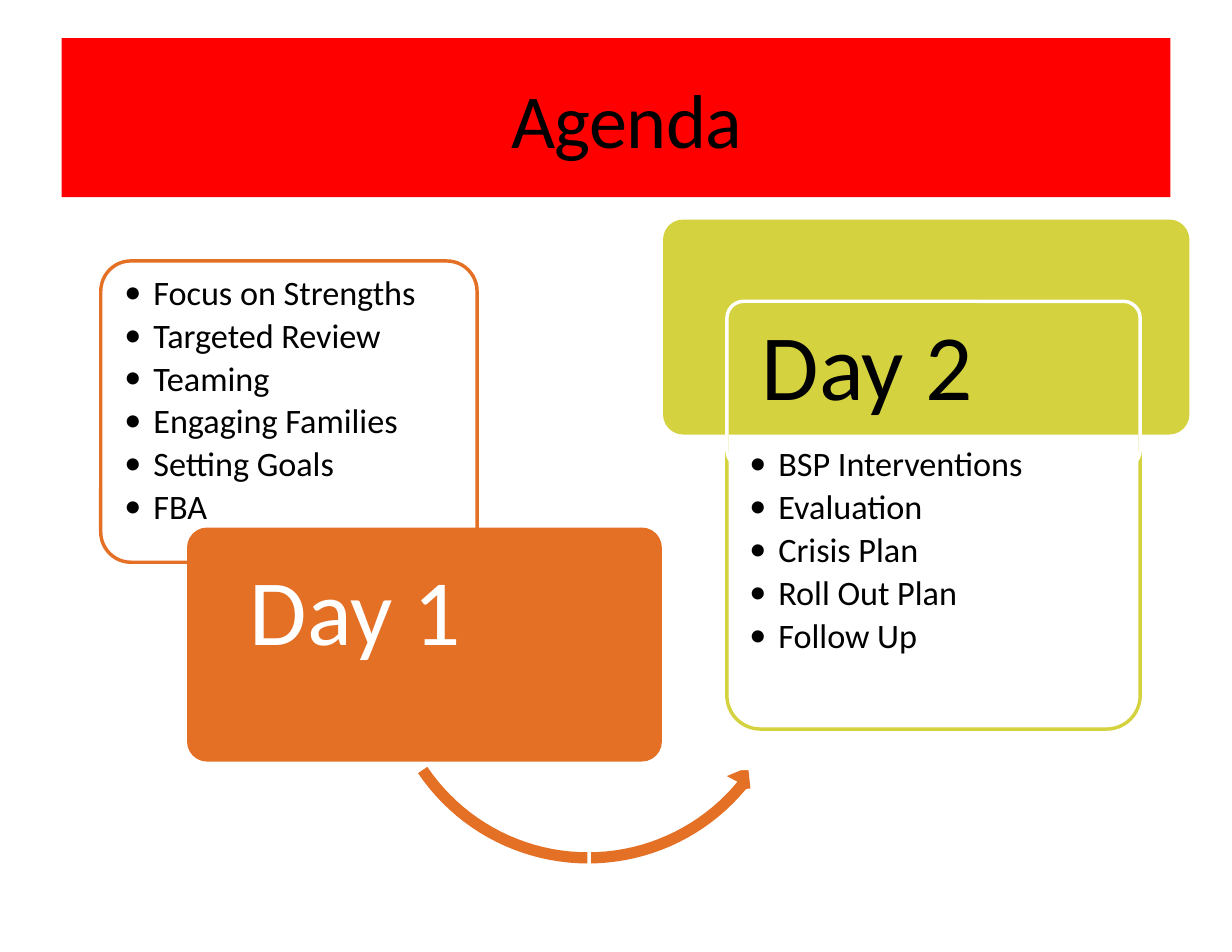
import math
from dataclasses import dataclass

import pptx
import pptx.dml.color
import pptx.enum.shapes
import pptx.enum.text
import pptx.oxml.ns
import pptx.shapes.autoshape
import pptx.util
from lxml import etree

Inches = pptx.util.Inches
Pt = pptx.util.Pt
Shape = pptx.shapes.autoshape.Shape

HUES = {
    "red": "FF0000",
    "orange": "E47026",
    "lime": "D5D23F",
    "white": "FFFFFF",
    "black": "000000",
}
FONT = "Calibri"


@dataclass
class Card:
    left: float
    top: float
    width: float
    height: float
    curve: float
    fill: str = ""
    line: str = ""
    label: str = ""
    ink: str = "black"
    pad: tuple[float, float] = (0, 0)


@dataclass
class Points:
    left: float
    top: float
    width: float
    height: float
    lines: tuple[str, ...]


def tint(name: str) -> pptx.dml.color.RGBColor:
    return pptx.dml.color.RGBColor.from_string(HUES[name])


def paint(shape: Shape, fill: str = "", line: str = "") -> None:
    if fill:
        shape.fill.solid()
        shape.fill.fore_color.rgb = tint(fill)
    else:
        shape.fill.background()
    if line:
        shape.line.color.rgb = tint(line)
        shape.line.width = Pt(2.21)
    else:
        shape.line.fill.background()


def write(shape: Shape, lines: tuple[str, ...], *, size: float, ink: str = "black",
          pad: tuple[float, float] = (0, 0), align: str = "LEFT",
          anchor: str = "TOP", margin: float = 0, hang: float = 0,
          track: float = 0) -> None:
    frame = shape.text_frame
    frame.word_wrap = True
    frame.auto_size = pptx.enum.text.MSO_AUTO_SIZE.NONE
    frame.vertical_anchor = pptx.enum.text.MSO_ANCHOR[anchor]
    frame.margin_left, frame.margin_top = map(Inches, pad)
    frame.margin_right = frame.margin_bottom = 0
    for place, line in enumerate(lines):
        para = frame.add_paragraph() if place else frame.paragraphs[0]
        para.alignment = pptx.enum.text.PP_ALIGN[align]
        para.space_before = Pt(1.2 if place else 0)
        props = para._p.get_or_add_pPr()
        props.set("marL", str(Inches(margin)))
        props.set("indent", str(-Inches(hang)))
        if hang:
            face = etree.SubElement(props, pptx.oxml.ns.qn("a:buFont"))
            face.set("typeface", FONT)
            etree.SubElement(props, pptx.oxml.ns.qn("a:buChar")).set("char", "•")
        run = para.add_run()
        run.text = line
        run.font.name = FONT
        run.font.size = Pt(size)
        run.font.color.rgb = tint(ink)
        if track:
            run._r.get_or_add_rPr().set("spc", str(round(track * 100)))


def draw_card(slide, card: Card) -> None:
    shape = slide.shapes.add_shape(
        pptx.enum.shapes.MSO_SHAPE.ROUNDED_RECTANGLE,
        Inches(card.left), Inches(card.top), Inches(card.width), Inches(card.height))
    shape.adjustments[0] = card.curve / min(card.width, card.height)
    shape.shadow.inherit = False
    paint(shape, card.fill, card.line)
    if card.label:
        inset = 0.29 * card.curve
        across, down = card.pad
        write(shape, (card.label,), size=60, ink=card.ink,
              pad=(across - inset, down - inset))


def draw_points(slide, points: Points) -> None:
    box = slide.shapes.add_textbox(
        Inches(points.left), Inches(points.top),
        Inches(points.width), Inches(points.height))
    write(box, points.lines, size=22, margin=0.27, hang=0.26)


def bend(radius: float, start: float, stop: float) -> list[tuple[float, float]]:
    steps = 40
    turns = [math.radians(start + (stop - start) * step / steps)
             for step in range(steps + 1)]
    return [(5.25 + radius * math.cos(turn), 5.88 + radius * math.sin(turn))
            for turn in turns]


def draw_arrow(slide) -> None:
    head = [(6.7, 7.04), (6.68, 6.85), (6.49, 6.93)]
    spots = bend(1.83, 146, 39.5) + head + bend(1.73, 39.5, 146)
    spots = [(Inches(across), Inches(down)) for across, down in spots]
    pen = slide.shapes.build_freeform(*spots[0])
    pen.add_line_segments(spots[1:], close=True)
    shape = pen.convert_to_shape()
    shape.shadow.inherit = False
    paint(shape, "orange")


def main() -> None:
    deck = pptx.Presentation()
    deck.slide_width, deck.slide_height = Inches(11), Inches(8.5)
    slide = deck.slides.add_slide(deck.slide_layouts[5])

    title = slide.shapes.title
    title.left, title.top = Inches(0.55), Inches(0.34)
    title.width, title.height = Inches(9.9), Inches(1.42)
    paint(title, "red")
    write(title, ("Agenda",), size=49, align="CENTER", anchor="MIDDLE",
          margin=0.19, track=-0.3)

    draw_arrow(slide)
    cards = (
        Card(0.9, 2.33, 3.36, 2.69, 0.27, line="orange"),
        Card(1.67, 4.71, 4.24, 2.09, 0.18, fill="orange", label="Day 1",
             ink="white", pad=(0.56, 0.22)),
        Card(5.26, 6.86, 1.89, 1.62, 0.12, line="white"),
        Card(6.49, 3.01, 3.69, 3.5, 0.3, line="lime"),
        Card(5.92, 1.96, 4.7, 1.92, 0.18, fill="lime", label="Day 2",
             pad=(0.88, 0.78)),
        Card(6.49, 2.69, 3.69, 1.48, 0.15, line="white"),
    )
    for card in cards:
        draw_card(slide, card)

    lists = (
        Points(1.1, 2.42, 3.1, 2.35,
               ("Focus on Strengths", "Targeted Review", "Teaming",
                "Engaging Families", "Setting Goals", "FBA")),
        Points(6.68, 3.95, 3.4, 2.25,
               ("BSP Interventions", "Evaluation", "Crisis Plan",
                "Roll Out Plan", "Follow Up")),
    )
    for points in lists:
        draw_points(slide, points)

    deck.save("out.pptx")


if __name__ == "__main__":
    main()
